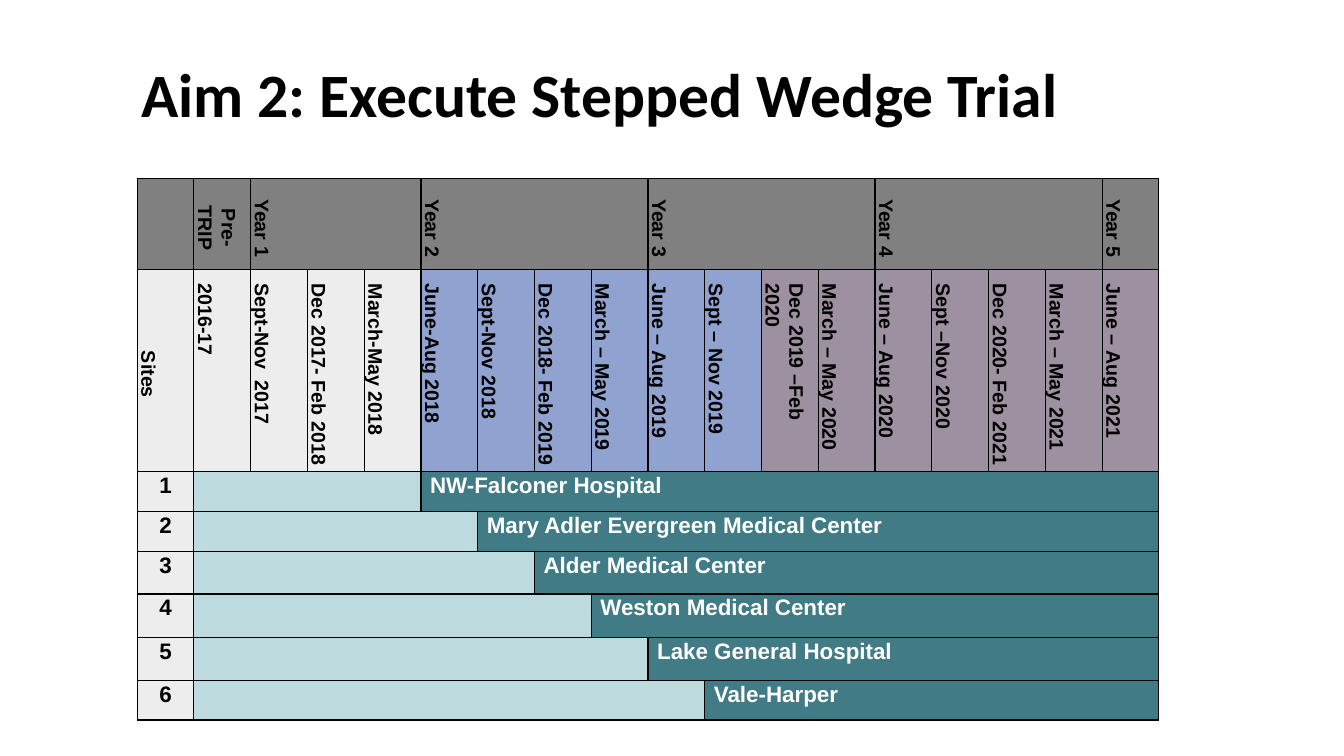
from lxml import etree
from pptx import Presentation, util as u
from pptx.dml import color
from pptx.enum import text
from pptx.oxml import ns

WIDTH, HEIGHT = 13.33, 7.5
YEARS = [("", 1), ("Pre-TRIP", 1), ("Year 1", 3), ("Year 2", 4), ("Year 3", 4), ("Year 4", 4), ("Year 5", 1)]
PERIODS = {
    "EDEDED": ["Sites", "2016-17", "Sept-Nov  2017", "Dec 2017- Feb 2018", "March-May 2018"],
    "90A2CF": ["June-Aug 2018", "Sept-Nov 2018", "Dec 2018- Feb 2019", "March – May 2019",
               "June – Aug 2019", "Sept – Nov 2019"],
    "9D90A0": ["Dec 2019 –Feb 2020", "March – May 2020", "June – Aug 2020", "Sept –Nov 2020",
               "Dec 2020- Feb 2021", "March – May 2021", "June – Aug 2021"],
}
SITES = ["NW-Falconer Hospital", "Mary Adler Evergreen Medical Center", "Alder Medical Center",
         "Weston Medical Center", "Lake General Hospital", "Vale-Harper"]
COLUMN_COUNT = 18
FIRST_STEP = 5
ROW_SHARES = [10.53, 26.67, 5.33, 5.33, 5.6, 5.73, 5.73, 5.2]
CENTER = text.PP_ALIGN.CENTER
MIDDLE = text.MSO_ANCHOR.MIDDLE


def rgb(value):
    return color.RGBColor.from_string(value)


def across(share):
    return u.Inches(WIDTH * share / 100)


def down(share):
    return u.Inches(HEIGHT * share / 100)


def apply(target, values):
    for name, value in values.items():
        setattr(target, name, value)


class TrialSlide:
    black, white = "000000", "FFFFFF"
    header, label, control, active = "808080", "EDEDED", "BDDADF", "417B85"
    margins = {"margin_left": u.Inches(0.06), "margin_right": u.Inches(0.06),
               "margin_top": 0, "margin_bottom": 0}

    def __init__(self, presentation):
        self.slide = presentation.slides.add_slide(presentation.slide_layouts[5])

    def run(self, paragraph, words, size, ink, font="Arial"):
        run = paragraph.add_run()
        run.text = words
        apply(run.font, {"size": u.Pt(size), "bold": True, "name": font})
        run.font.color.rgb = rgb(ink)

    def title(self, words, left, top, width, height):
        shape = self.slide.shapes.title
        apply(shape, {"left": across(left), "top": down(top),
                      "width": across(width), "height": down(height)})
        apply(shape.text_frame, {"word_wrap": True, "vertical_anchor": MIDDLE,
                                 "auto_size": text.MSO_AUTO_SIZE.NONE})
        paragraph = shape.text_frame.paragraphs[0]
        apply(paragraph, {"alignment": text.PP_ALIGN.LEFT, "line_spacing": 0.9})
        self.run(paragraph, words, 44, self.black, "Calibri")

    def table(self, left, top, width, row_shares, column_count):
        frame = self.slide.shapes.add_table(
            len(row_shares), column_count, across(left), down(top), across(width), down(sum(row_shares)))
        self.grid = frame.table
        apply(self.grid, {"first_row": False, "horz_banding": False})
        for column in self.grid.columns:
            column.width = across(width / column_count)
        for row, share in zip(self.grid.rows, row_shares):
            row.height = down(share)
        for cell in self.grid.iter_cells():
            self.borders(cell)

    def borders(self, cell):
        properties = cell._tc.get_or_add_tcPr()
        for side in ("a:lnL", "a:lnR", "a:lnT", "a:lnB"):
            line = etree.SubElement(properties, ns.qn(side), w=str(u.Pt(1)))
            fill = etree.SubElement(line, ns.qn("a:solidFill"))
            etree.SubElement(fill, ns.qn("a:srgbClr"), val=self.black)

    def cell(self, row, column, fill, runs=(), span=1, align=None, anchor=None, vertical=False):
        cell = self.grid.cell(row, column)
        if span > 1:
            cell.merge(self.grid.cell(row, column + span - 1))
        apply(cell, self.margins)
        cell.fill.solid()
        cell.fill.fore_color.rgb = rgb(fill)
        paragraph = cell.text_frame.paragraphs[0]
        apply(paragraph, {"alignment": align, "line_spacing": 1.07})
        for words, size, ink in runs:
            self.run(paragraph, words, size, ink)
        if anchor is not None:
            cell.vertical_anchor = anchor
        if vertical:
            cell._tc.get_or_add_tcPr().set("vert", "vert")
            paragraph._p.get_or_add_pPr().set("marL", str(u.Inches(0.08)))

    def year_row(self, years):
        column = 0
        for words, span in years:
            runs = [(words, 14, self.black)] if words else []
            self.cell(0, column, self.header, runs, span, CENTER, MIDDLE, bool(words))
            column += span

    def period_row(self, periods):
        cells = [(fill, words) for fill, names in periods.items() for words in names]
        for column, (fill, words) in enumerate(cells):
            align = CENTER if column == 0 else None
            self.cell(1, column, fill, [(words, 14, self.black)], align=align, vertical=True)

    def site_row(self, index, name):
        row, step = index + 2, index + FIRST_STEP
        self.cell(row, 0, self.label, [(str(index + 1), 16, self.black)], align=CENTER)
        self.cell(row, 1, self.control, span=step - 1)
        self.cell(row, step, self.active, [(" ", 8, self.white), (name, 16, self.white)],
                  COLUMN_COUNT - step)


def main():
    presentation = Presentation()
    apply(presentation, {"slide_width": u.Inches(WIDTH), "slide_height": u.Inches(HEIGHT)})
    trial = TrialSlide(presentation)
    trial.title("Aim 2: Execute Stepped Wedge Trial", 9.75, 8.53, 85.45, 8.8)
    trial.table(10.2, 23.6, 76.07, ROW_SHARES, COLUMN_COUNT)
    trial.year_row(YEARS)
    trial.period_row(PERIODS)
    for index, name in enumerate(SITES):
        trial.site_row(index, name)
    presentation.save("out.pptx")


if __name__ == "__main__":
    main()
